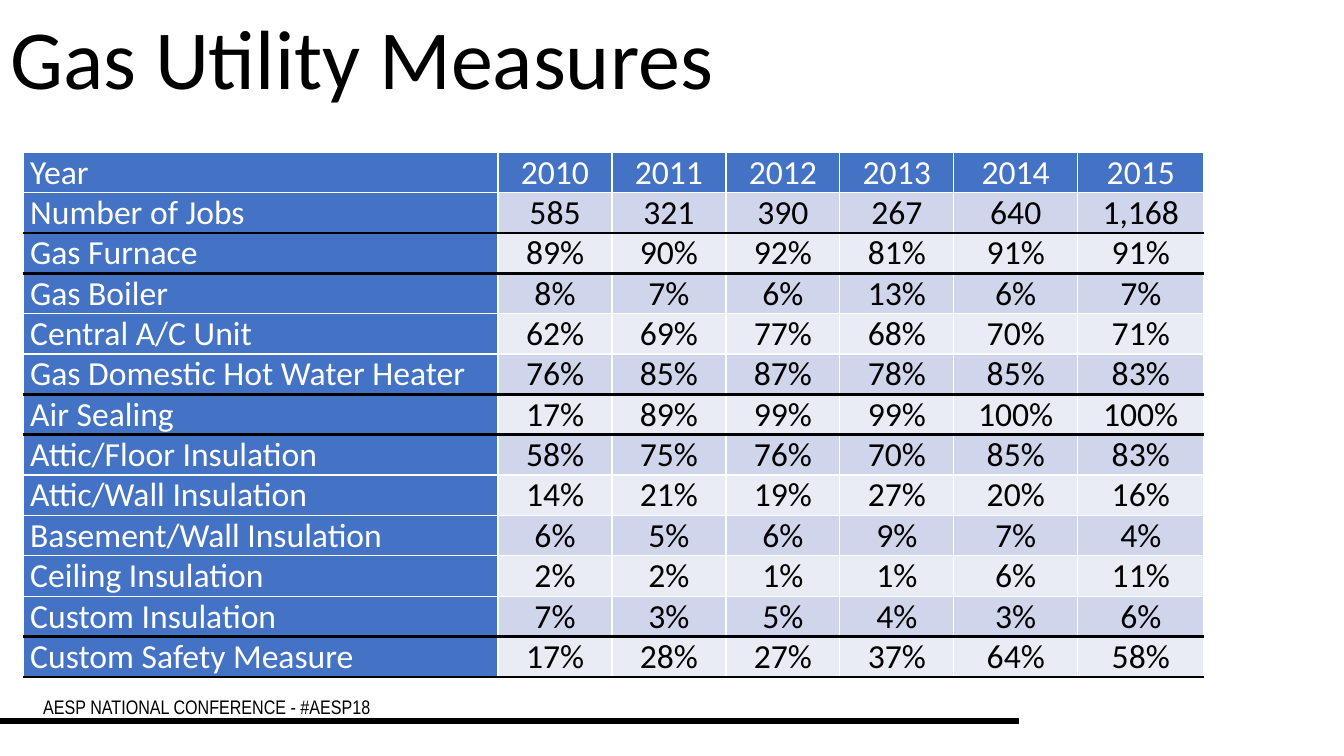
from dataclasses import dataclass

import pptx
import pptx.dml.color
import pptx.enum.shapes
import pptx.enum.text
import pptx.oxml
import pptx.oxml.ns
import pptx.util
from pptx.util import Inches

COLORS = {
    "black": "000000",
    "white": "FFFFFF",
    "blue": "4472C4",
    "band_dark": "CFD5EA",
    "band_light": "E9EBF5",
}
COLUMN_WIDTHS = [4.71, 1.13, 1.13, 1.13, 1.13, 1.23, 1.25]
ROW_HEIGHT = 0.4


@dataclass
class Measure:
    name: str
    values: str
    ruled: bool = False


@dataclass
class Border:
    side: str
    color: str
    points: float


MEASURES = [
    Measure("Year", "2010 2011 2012 2013 2014 2015"),
    Measure("Number of Jobs", "585 321 390 267 640 1,168", True),
    Measure("Gas Furnace", "89% 90% 92% 81% 91% 91%", True),
    Measure("Gas Boiler", "8% 7% 6% 13% 6% 7%"),
    Measure("Central A/C Unit", "62% 69% 77% 68% 70% 71%"),
    Measure("Gas Domestic Hot Water Heater", "76% 85% 87% 78% 85% 83%", True),
    Measure("Air Sealing", "17% 89% 99% 99% 100% 100%", True),
    Measure("Attic/Floor Insulation", "58% 75% 76% 70% 85% 83%"),
    Measure("Attic/Wall Insulation", "14% 21% 19% 27% 20% 16%"),
    Measure("Basement/Wall Insulation", "6% 5% 6% 9% 7% 4%"),
    Measure("Ceiling Insulation", "2% 2% 1% 1% 6% 11%"),
    Measure("Custom Insulation", "7% 3% 5% 4% 3% 6%", True),
    Measure("Custom Safety Measure", "17% 28% 27% 37% 64% 58%", True),
]


def rgb(name: str) -> pptx.dml.color.RGBColor:
    return pptx.dml.color.RGBColor.from_string(COLORS[name])


def style_text(para, size: float, font: str, color: str) -> None:
    for span in para.runs:
        span.font.size = pptx.util.Pt(size)
        span.font.name = font
        span.font.bold = False
        span.font.color.rgb = rgb(color)


def add_border(cell, border: Border) -> None:
    properties = cell._tc.get_or_add_tcPr()
    width = pptx.util.Pt(border.points)
    properties.append(pptx.oxml.parse_xml(
        f'<a:ln{border.side} {pptx.oxml.ns.nsdecls("a")} w="{width}">'
        f'<a:solidFill><a:srgbClr val="{COLORS[border.color]}"/></a:solidFill>'
        f'</a:ln{border.side}>'
    ))


def rule(side: str, ruled: bool) -> Border:
    return Border(side, "black", 2.25) if ruled else Border(side, "white", 1)


def fill_cell(cell, text: str, row: int, column: int) -> None:
    ruled_above = row > 0 and MEASURES[row - 1].ruled
    for border in (
        Border("L", "white", 1),
        Border("R", "white", 1),
        rule("T", ruled_above),
        rule("B", MEASURES[row].ruled),
    ):
        add_border(cell, border)
    heading = row == 0 or column == 0
    band = "band_dark" if row % 2 else "band_light"
    cell.fill.solid()
    cell.fill.fore_color.rgb = rgb("blue" if heading else band)
    cell.margin_left = cell.margin_right = Inches(0.07)
    cell.margin_top = cell.margin_bottom = 0
    cell.vertical_anchor = pptx.enum.text.MSO_ANCHOR.MIDDLE
    para = cell.text_frame.paragraphs[0]
    para.text = text
    if column:
        para.alignment = pptx.enum.text.PP_ALIGN.CENTER
    style_text(para, 24, "Calibri", "white" if heading else "black")


def add_measures(page) -> None:
    frame = page.shapes.add_table(
        len(MEASURES), len(COLUMN_WIDTHS), Inches(0.23), Inches(1.51),
        Inches(sum(COLUMN_WIDTHS)), Inches(ROW_HEIGHT * len(MEASURES)),
    )
    table = frame.table
    for column, width in zip(table.columns, COLUMN_WIDTHS):
        column.width = Inches(width)
    for row, measure in enumerate(MEASURES):
        table.rows[row].height = Inches(ROW_HEIGHT)
        for column, text in enumerate([measure.name, *measure.values.split()]):
            fill_cell(table.cell(row, column), text, row, column)


def add_footer(page) -> None:
    bar = page.shapes.add_shape(
        pptx.enum.shapes.MSO_SHAPE.RECTANGLE,
        0, Inches(7.13), Inches(10.1), Inches(0.05),
    )
    bar.shadow.inherit = False
    bar.fill.solid()
    bar.fill.fore_color.rgb = rgb("black")
    bar.line.color.rgb = rgb("black")
    bar.line.width = pptx.util.Pt(1)
    box = page.shapes.add_textbox(Inches(0.33), Inches(6.84), Inches(8.54), Inches(0.34))
    box.text_frame.word_wrap = True
    box.text_frame.auto_size = pptx.enum.text.MSO_AUTO_SIZE.SHAPE_TO_FIT_TEXT
    box.text_frame.text = "AESP NATIONAL CONFERENCE - #AESP18"
    style_text(box.text_frame.paragraphs[0], 14, "Arial Narrow", "black")


def add_title(page) -> None:
    title = page.shapes.title
    title.left, title.top = 0, 0
    title.width, title.height = Inches(8.98), Inches(1.11)
    frame = title.text_frame
    frame.text = "Gas Utility Measures"
    frame.word_wrap = True
    frame.auto_size = pptx.enum.text.MSO_AUTO_SIZE.SHAPE_TO_FIT_TEXT
    frame.vertical_anchor = pptx.enum.text.MSO_ANCHOR.TOP
    frame.paragraphs[0].alignment = pptx.enum.text.PP_ALIGN.LEFT
    style_text(frame.paragraphs[0], 60, "Calibri", "black")


def main() -> None:
    deck = pptx.Presentation()
    deck.slide_width = Inches(13.33)
    deck.slide_height = Inches(7.5)
    page = deck.slides.add_slide(deck.slide_layouts[5])
    add_footer(page)
    add_measures(page)
    add_title(page)
    deck.save("out.pptx")


if __name__ == "__main__":
    main()
